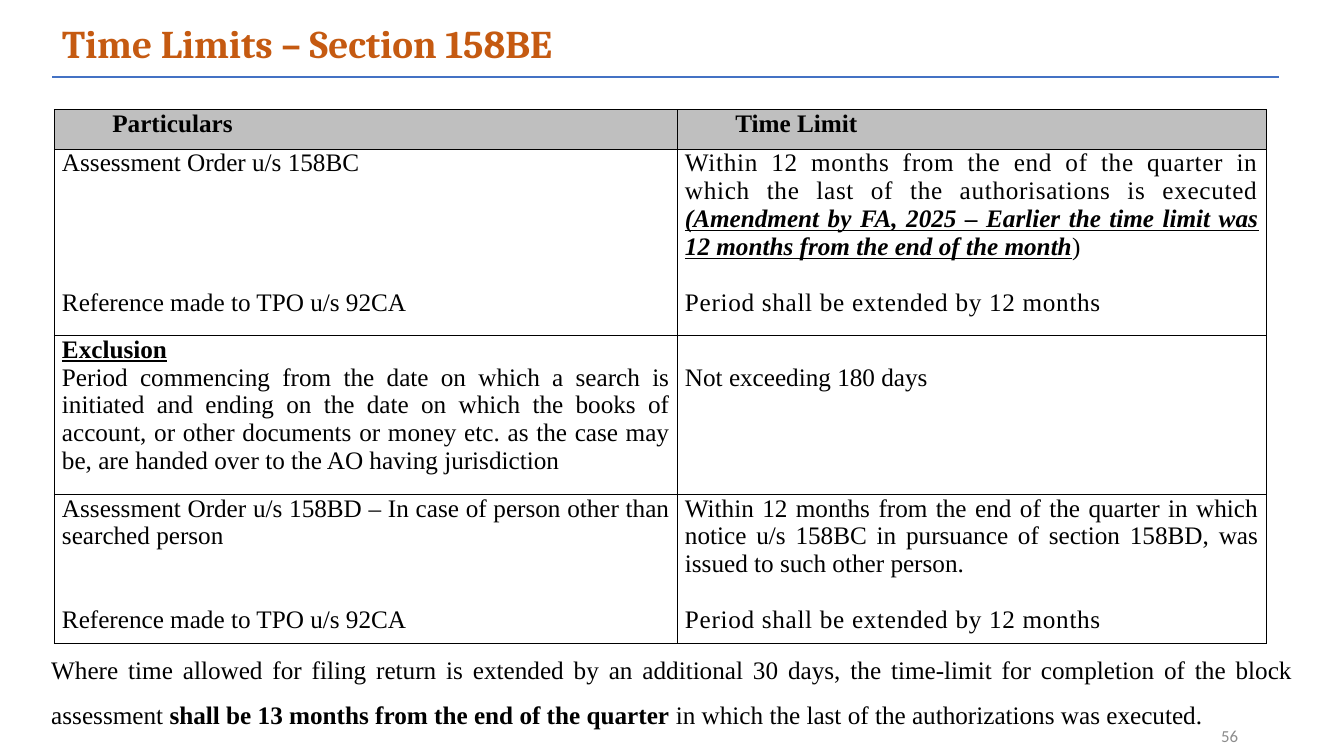
import pptx
import pptx.dml.color
import pptx.enum.shapes
import pptx.enum.text
import pptx.oxml
import pptx.oxml.ns
import pptx.util

Pt = pptx.util.Pt
RGB = pptx.dml.color.RGBColor
ALIGN = pptx.enum.text.PP_ALIGN
MIDDLE = pptx.enum.text.MSO_ANCHOR.MIDDLE

ORANGE = RGB(0xC5, 0x5A, 0x11)
BLUE = RGB(0x44, 0x72, 0xC4)
GREY = RGB(0x8C, 0x8C, 0x8C)
HEADER_FILL = RGB(0xBF, 0xBF, 0xBF)
BLACK = RGB(0, 0, 0)
WHITE = RGB(255, 255, 255)

SERIF = "Times New Roman"
BODY_SIZE = 18
LINE = 20  # height of one body line
BOLD, ITALIC, UNDERLINE, SPACED = "bold", "italic", "underline", "spaced"

# A paragraph is (lines of space before, [(text, *styles), ...]).
REFERENCE = (4, [("Reference made to TPO u/s 92CA",)])
EXTENSION = (1, [("Period shall be extended by 12 months", SPACED)])
HEADINGS = ["Particulars", "Time Limit"]
ROWS = [
    ([(0, [("Assessment Order u/s 158BC",)]), REFERENCE],
     [(0, [("Within 12 months from the end of the quarter in which the last of "
            "the authorisations is executed ", SPACED),
           ("(Amendment by FA, 2025 – Earlier the time limit was 12 months from "
            "the end of the month", BOLD, ITALIC, UNDERLINE),
           (")",)]),
      EXTENSION]),
    ([(0, [("Exclusion", BOLD, UNDERLINE)]),
      (0, [("Period commencing from the date on which a search is initiated and "
            "ending on the date on which the books of account, or other documents "
            "or money etc. as the case may be, are handed over to the AO having "
            "jurisdiction",)])],
     [(1, [("Not exceeding 180 days",)])]),
    ([(0, [("Assessment Order u/s 158BD – In case of person other than searched "
            "person",)]),
      (2, REFERENCE[1])],
     [(0, [("Within 12 months from the end of the quarter in which notice u/s "
            "158BC in pursuance of section 158BD, was issued to such other "
            "person.",)]),
      EXTENSION]),
]
COLUMN_WIDTHS = [445, 420.5]
ROW_HEIGHTS = [28.3, 133, 113.5, 99.7]
NOTE = [
    ("Where time allowed for filing return is extended by an additional 30 days, "
     "the time-limit for completion of the block assessment ",),
    ("shall be 13 months from the end of the quarter", BOLD),
    (" in which the last of the authorizations was executed.",),
]


def set_font(p, name, size, color, bold=False):
    p.font.name = name
    p.font.size = Pt(size)
    p.font.color.rgb = color
    p.font.bold = bold


def add_runs(p, runs):
    for text, *styles in runs:
        r = p.add_run()
        r.text = text
        for style in styles:
            if style == SPACED:
                r.font._element.set("spc", "50")
            else:
                setattr(r.font, style, True)


def add_text_box(s, left, top, width, height):
    tf = s.shapes.add_textbox(Pt(left), Pt(top), Pt(width), Pt(height)).text_frame
    tf.word_wrap = True
    return tf


def add_title(s, left, top, width, height):
    tf = add_text_box(s, left, top, width, height)
    tf.vertical_anchor = MIDDLE
    tf.margin_top = tf.margin_bottom = 0
    p = tf.paragraphs[0]
    p.text = "Time Limits – Section 158BE"
    p.line_spacing = 0.9
    set_font(p, "Cambria", 28, ORANGE, True)


def add_rule(s, left, top, width):
    line = s.shapes.add_connector(pptx.enum.shapes.MSO_CONNECTOR.STRAIGHT,
                                  Pt(left), Pt(top), Pt(left + width), Pt(top))
    line.line.color.rgb = BLUE
    line.line.width = Pt(1.5)
    sp_pr = line._element.spPr
    sp_pr.append(sp_pr.makeelement(pptx.oxml.ns.qn("a:effectLst"), {}))


def style_cell(cell, fill):
    cell.margin_left = cell.margin_right = Pt(5.4)
    cell.margin_top = cell.margin_bottom = 0
    tc_pr = cell._tc.get_or_add_tcPr()
    for side in "LRTB":
        tc_pr.append(pptx.oxml.parse_xml(
            f'<a:ln{side} {pptx.oxml.ns.nsdecls("a")} w="12700"><a:solidFill>'
            f'<a:srgbClr val="{BLACK}"/></a:solidFill></a:ln{side}>'))
    cell.fill.solid()
    cell.fill.fore_color.rgb = fill


def fill_cell(cell, paragraphs, bold=False):
    tf = cell.text_frame
    for i, (gap, runs) in enumerate(paragraphs):
        p = tf.add_paragraph() if i else tf.paragraphs[0]
        p.alignment = ALIGN.JUSTIFY
        set_font(p, SERIF, BODY_SIZE, BLACK, bold)
        if i:
            p.space_before = Pt(gap * LINE)
        else:
            cell.margin_top = Pt(gap * LINE)
        add_runs(p, runs)


def add_limits_table(s, left, top):
    table = s.shapes.add_table(
        len(ROW_HEIGHTS), len(COLUMN_WIDTHS), Pt(left), Pt(top),
        Pt(sum(COLUMN_WIDTHS)), Pt(sum(ROW_HEIGHTS))).table
    table.horz_banding = False
    for column, width in zip(table.columns, COLUMN_WIDTHS):
        column.width = Pt(width)
    for row, height in zip(table.rows, ROW_HEIGHTS):
        row.height = Pt(height)
    for c, heading in enumerate(HEADINGS):
        cell = table.cell(0, c)
        style_cell(cell, HEADER_FILL)
        fill_cell(cell, [(0, [(heading,)])], bold=True)
        cell.text_frame.paragraphs[0]._p.get_or_add_pPr().set("marL", str(Pt(36)))
    for r, row in enumerate(ROWS, start=1):
        for c, paragraphs in enumerate(row):
            style_cell(table.cell(r, c), WHITE)
            fill_cell(table.cell(r, c), paragraphs)


def add_note(s, left, top, width, height):
    p = add_text_box(s, left, top, width, height).paragraphs[0]
    p.alignment = ALIGN.JUSTIFY
    p.line_spacing = 1.5
    p.space_after = Pt(8)
    set_font(p, SERIF, BODY_SIZE, BLACK)
    add_runs(p, NOTE)


def add_page_number(s, left, top, width, height):
    tf = add_text_box(s, left, top, width, height)
    tf.vertical_anchor = MIDDLE
    p = tf.paragraphs[0]
    p.text = "56"
    p.alignment = ALIGN.RIGHT
    set_font(p, "Calibri", 12, GREY)


def main():
    prs = pptx.Presentation()
    prs.slide_width, prs.slide_height = Pt(960), Pt(540)
    s = prs.slides.add_slide(prs.slide_layouts[6])
    add_title(s, 37.4, 19.4, 775.4, 26.6)
    add_rule(s, 37.4, 54.7, 876.2)
    add_page_number(s, 675.4, 511.2, 216, 28.8)
    add_limits_table(s, 38.9, 78.5)
    add_note(s, 29.5, 452.9, 901.4, 72.7)
    prs.save("out.pptx")


if __name__ == "__main__":
    main()
